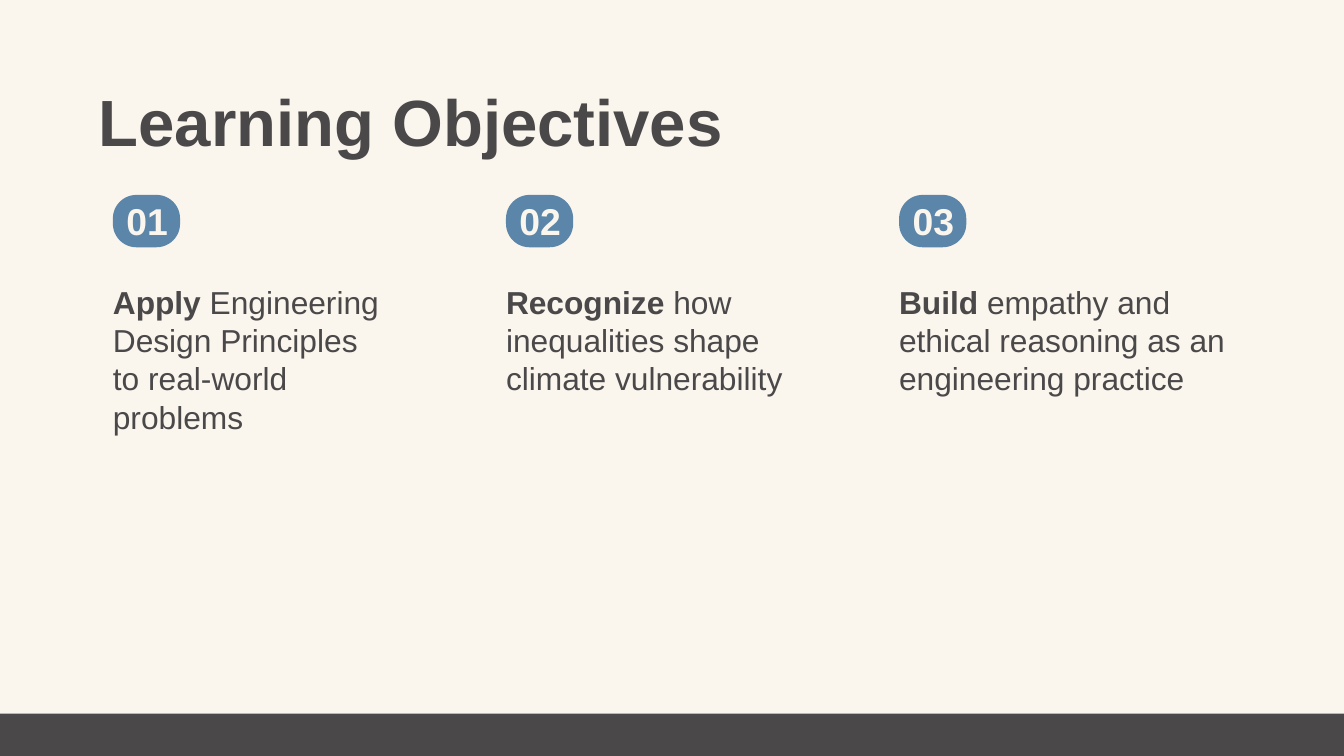
from pptx import Presentation
from pptx import util as u
from pptx.dml.color import RGBColor
from pptx.enum import shapes, text

WIDE, HIGH = 20, 11.25
CREAM = RGBColor(0xFA, 0xF6, 0xEE)
DARK = RGBColor(0x4A, 0x48, 0x49)
BLUE = RGBColor(0x5B, 0x85, 0xA9)
FONT = "Arial"
LEFT, STEP = 1.68, 5.85
GOALS = [
    ("Apply ", "Engineering Design Principles to real-world problems", 4.08, 4),
    ("Recognize ", "how inequalities shape climate vulnerability", 4.35, 3),
    ("Build ", "empathy and ethical reasoning as an engineering practice", 5.5, 3),
]


def inch(*box):
    return [u.Inches(n) for n in box]


def paint(shape, color):
    shape.shadow.inherit = False
    shape.fill.solid()
    shape.fill.fore_color.rgb = color
    shape.line.fill.background()


def write(shape, runs, size, color):
    frame = shape.text_frame
    frame.word_wrap = True
    frame.auto_size = text.MSO_AUTO_SIZE.NONE
    frame.vertical_anchor = text.MSO_ANCHOR.TOP
    frame.margin_left = frame.margin_right = 0
    frame.margin_top = frame.margin_bottom = 0
    para = frame.paragraphs[0]
    para.alignment = text.PP_ALIGN.LEFT
    para.line_spacing = u.Pt(round(size * 1.21, 1))
    font = para.font
    font.name, font.size, font.bold = FONT, u.Pt(size), True
    font.color.rgb = color
    for words, bold in runs:
        run = para.add_run()
        run.text = words
        if not bold:
            run.font.bold = False


def add_foot(slide, left, top, width, height):
    bar = slide.shapes.add_shape(
        shapes.MSO_SHAPE.RECTANGLE, *inch(left, top, width, height))
    paint(bar, DARK)


def add_title(slide, left, top, width, height):
    title = slide.shapes.title
    title.left, title.top, title.width, title.height = inch(left, top, width, height)
    write(title, [("Learning Objectives", True)], 70, DARK)


def add_badge(slide, left, top, label):
    group = slide.shapes.add_group_shape()
    pill = group.shapes.add_shape(
        shapes.MSO_SHAPE.ROUNDED_RECTANGLE, *inch(left, top, 1, 0.78))
    pill.adjustments[0] = 0.45
    paint(pill, BLUE)
    digits = group.shapes.add_textbox(*inch(left + 0.2, top + 0.05, 3.39, 0.67))
    write(digits, [(label, True)], 40, CREAM)


def add_goal(slide, left, top, number, goal):
    verb, rest, width, lines = goal
    add_badge(slide, left, top, f"{number:02}")
    body = slide.shapes.add_textbox(*inch(left, top + 1.3, width, lines * 0.57))
    write(body, [(verb, True), (rest, False)], 34, DARK)


def main():
    deck = Presentation()
    deck.slide_width, deck.slide_height = inch(WIDE, HIGH)
    slide = deck.slides.add_slide(deck.slide_layouts.get_by_name("Title Only"))
    slide.background.fill.solid()
    slide.background.fill.fore_color.rgb = CREAM
    add_foot(slide, -0.38, HIGH - 0.63, 21.74, 0.63)
    add_title(slide, 1.47, 1.2, 17.82, 1.18)
    for index, goal in enumerate(GOALS):
        add_goal(slide, LEFT + index * STEP, 2.9, index + 1, goal)
    deck.save("out.pptx")


if __name__ == "__main__":
    main()
